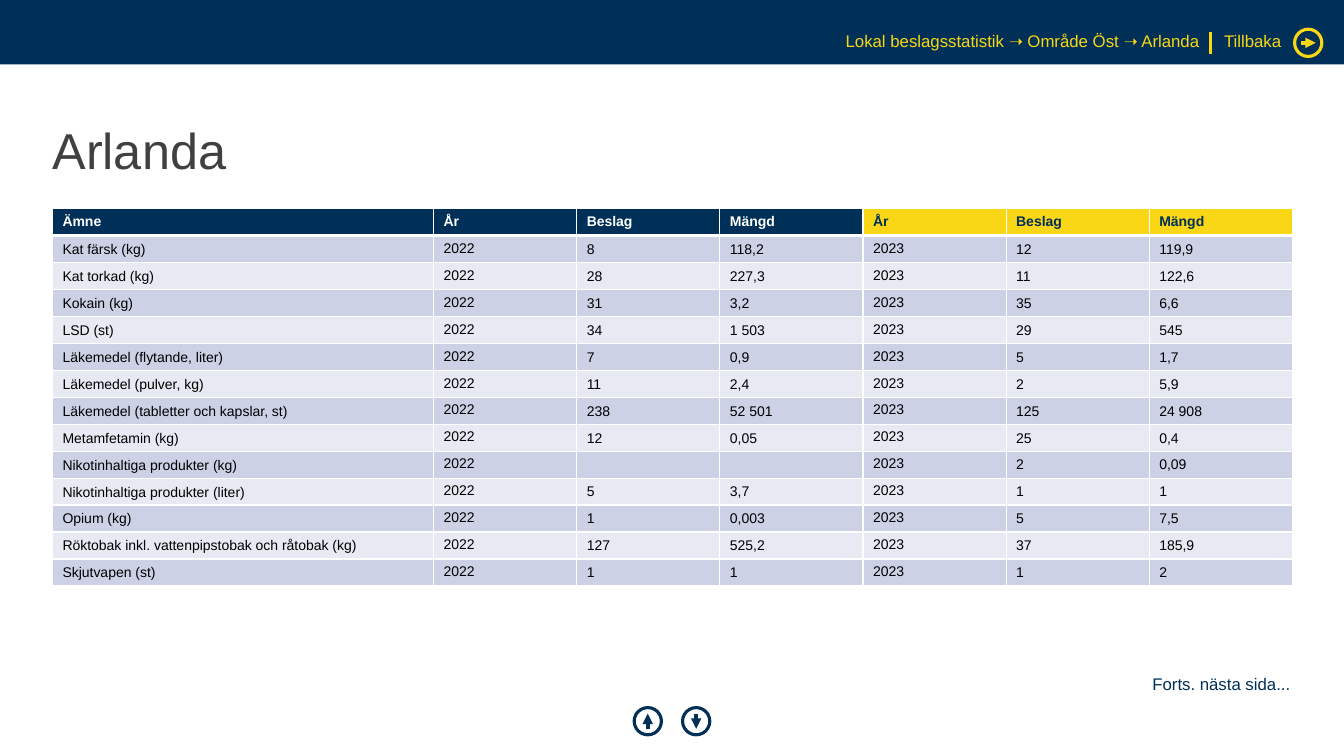
from pptx import Presentation
from pptx.util import Inches, Pt
from pptx.dml.color import RGBColor
from pptx.enum.shapes import MSO_SHAPE as Shape, MSO_CONNECTOR as Link
from pptx.enum.text import PP_ALIGN as Align, MSO_ANCHOR as Anchor
from pptx.oxml.ns import qn
from lxml.etree import SubElement

NAVY = RGBColor(0x00, 0x30, 0x57)
GOLD = RGBColor(0xF9, 0xD6, 0x16)
GREY = RGBColor(0x40, 0x40, 0x40)
BLACK = RGBColor(0x00, 0x00, 0x00)
WHITE = RGBColor(0xFF, 0xFF, 0xFF)
BANDS = RGBColor(0xCC, 0xD1, 0xE6), RGBColor(0xE7, 0xEA, 0xF3)
FONT = "Arial"

COLS = [3.78] + [1.42] * 6
ROW = 0.24
HEADS = ["Ämne"] + ["År", "Beslag", "Mängd"] * 2
DATA = [
    ("Kat färsk (kg)", "8", "118,2", "12", "119,9"),
    ("Kat torkad (kg)", "28", "227,3", "11", "122,6"),
    ("Kokain (kg)", "31", "3,2", "35", "6,6"),
    ("LSD (st)", "34", "1 503", "29", "545"),
    ("Läkemedel (flytande, liter)", "7", "0,9", "5", "1,7"),
    ("Läkemedel (pulver, kg)", "11", "2,4", "2", "5,9"),
    ("Läkemedel (tabletter och kapslar, st)", "238", "52 501", "125", "24 908"),
    ("Metamfetamin (kg)", "12", "0,05", "25", "0,4"),
    ("Nikotinhaltiga produkter (kg)", "", "", "2", "0,09"),
    ("Nikotinhaltiga produkter (liter)", "5", "3,7", "1", "1"),
    ("Opium (kg)", "1", "0,003", "5", "7,5"),
    ("Röktobak inkl. vattenpipstobak och råtobak (kg)", "127", "525,2", "37", "185,9"),
    ("Skjutvapen (st)", "1", "1", "1", "2"),
]


def add_run(para, text, size, color, bold=False):
    run = para.add_run()
    run.text = text
    font = run.font
    font.name, font.size, font.bold = FONT, Pt(size), bold
    font.color.rgb = color


def add_text(slide, box, text, size, color, align=Align.LEFT, anchor=Anchor.TOP):
    frame = slide.shapes.add_textbox(*map(Inches, box)).text_frame
    frame.word_wrap = True
    frame.vertical_anchor = anchor
    frame.margin_left = frame.margin_right = 0
    frame.margin_top = frame.margin_bottom = 0
    para = frame.paragraphs[0]
    para.alignment = align
    para.line_spacing = 0.9
    add_run(para, text, size, color)


def add_line(slide, start, end, color, width, arrow=False):
    line = slide.shapes.add_connector(Link.STRAIGHT, *map(Inches, start + end))
    line.line.color.rgb = color
    line.line.width = Pt(width)
    if arrow:
        SubElement(line.line._get_or_add_ln(), qn("a:tailEnd"), type="triangle")
    SubElement(line._element.spPr, qn("a:effectLst"))


def add_icon(slide, box, way, color):
    left, top, wide, high = box
    x, y = left + wide / 2, top + high / 2
    dx, dy = way[0] * 0.075, way[1] * 0.075
    add_line(slide, (x - dx, y - dy), (x + dx, y + dy), color, 2.5, True)
    ring = slide.shapes.add_shape(Shape.OVAL, *map(Inches, box))
    ring.shadow.inherit = False
    ring.fill.background()
    ring.line.color.rgb = color
    ring.line.width = Pt(2.25)


def add_top(slide, box):
    left, top, wide, high = box
    bar = slide.shapes.add_shape(Shape.RECTANGLE, *map(Inches, box))
    bar.shadow.inherit = False
    bar.fill.solid()
    bar.fill.fore_color.rgb = NAVY
    bar.line.fill.background()
    right, row = left + wide, top + 0.33
    add_text(slide, (right - 7.83, row, 6.4, 0.19),
             "Lokal beslagsstatistik ➝ Område Öst ➝ Arlanda", 12, GOLD, Align.RIGHT)
    add_line(slide, (right - 1.32, top + 0.32), (right - 1.32, top + 0.54), GOLD, 2.25)
    add_text(slide, (right - 1.19, row, 0.65, 0.19), "Tillbaka", 12, GOLD)
    add_icon(slide, (right - 0.49, top + 0.29, 0.27, 0.27), (1, 0), GOLD)


def set_edge(cell, side, width):
    edge = SubElement(cell._tc.get_or_add_tcPr(), qn("a:ln" + side), w=str(Pt(width)))
    fill = SubElement(edge, qn("a:solidFill"))
    SubElement(fill, qn("a:srgbClr"), val=str(WHITE))


def set_cell(cell, text, row, col):
    head = row == 0
    if head:
        fill, color = (NAVY, WHITE) if col < 4 else (GOLD, NAVY)
    else:
        fill, color = BANDS[(row - 1) % 2], BLACK
    for side in "LRTB":
        thick = (side == "B" and head) or (side == "T" and row == 1)
        set_edge(cell, side, 3 if thick else 1)
    cell.fill.solid()
    cell.fill.fore_color.rgb = fill
    if not head and col == 0:
        cell.vertical_anchor = Anchor.BOTTOM
    elif not head and col not in (1, 4):
        cell.vertical_anchor = Anchor.MIDDLE
        cell.margin_top = cell.margin_right = Inches(0.01)
        cell.margin_bottom = 0
    para = cell.text_frame.paragraphs[0]
    if text:
        add_run(para, text, 10, color, head)
    else:
        SubElement(para._p, qn("a:endParaRPr"), sz="1000")


def add_grid(slide, box):
    rows = [HEADS]
    for name, old, old_sum, new, new_sum in DATA:
        rows.append([name, "2022", old, old_sum, "2023", new, new_sum])
    table = slide.shapes.add_table(len(rows), len(COLS), *map(Inches, box)).table
    for col, wide in zip(table.columns, COLS):
        col.width = Inches(wide)
    for r, texts in enumerate(rows):
        table.rows[r].height = Inches(ROW)
        for c, text in enumerate(texts):
            set_cell(table.cell(r, c), text, r, c)


def add_foot(slide, box):
    left, top, wide, high = box
    add_text(slide, (left + wide - 6.4, top, 6.4, 0.19),
             "Forts. nästa sida...", 12, NAVY, Align.RIGHT)
    for i, way in enumerate([(0, -1), (0, 1)]):
        add_icon(slide, (left + 5.77 + i * 0.48, top + 0.31, 0.27, 0.27), way, NAVY)


def main():
    deck = Presentation()
    deck.slide_width, deck.slide_height = Inches(13.33), Inches(7.5)
    slide = deck.slides.add_slide(deck.slide_layouts[6])
    add_top(slide, (0, 0, 13.33, 0.64))
    add_text(slide, (0.52, 0.79, 12.28, 1.45), "Arlanda", 36, GREY, anchor=Anchor.MIDDLE)
    add_grid(slide, (0.52, 2.07, sum(COLS), ROW * (len(DATA) + 1)))
    add_foot(slide, (0.52, 6.71, 12.28, 0.58))
    deck.save("out.pptx")


if __name__ == "__main__":
    main()
